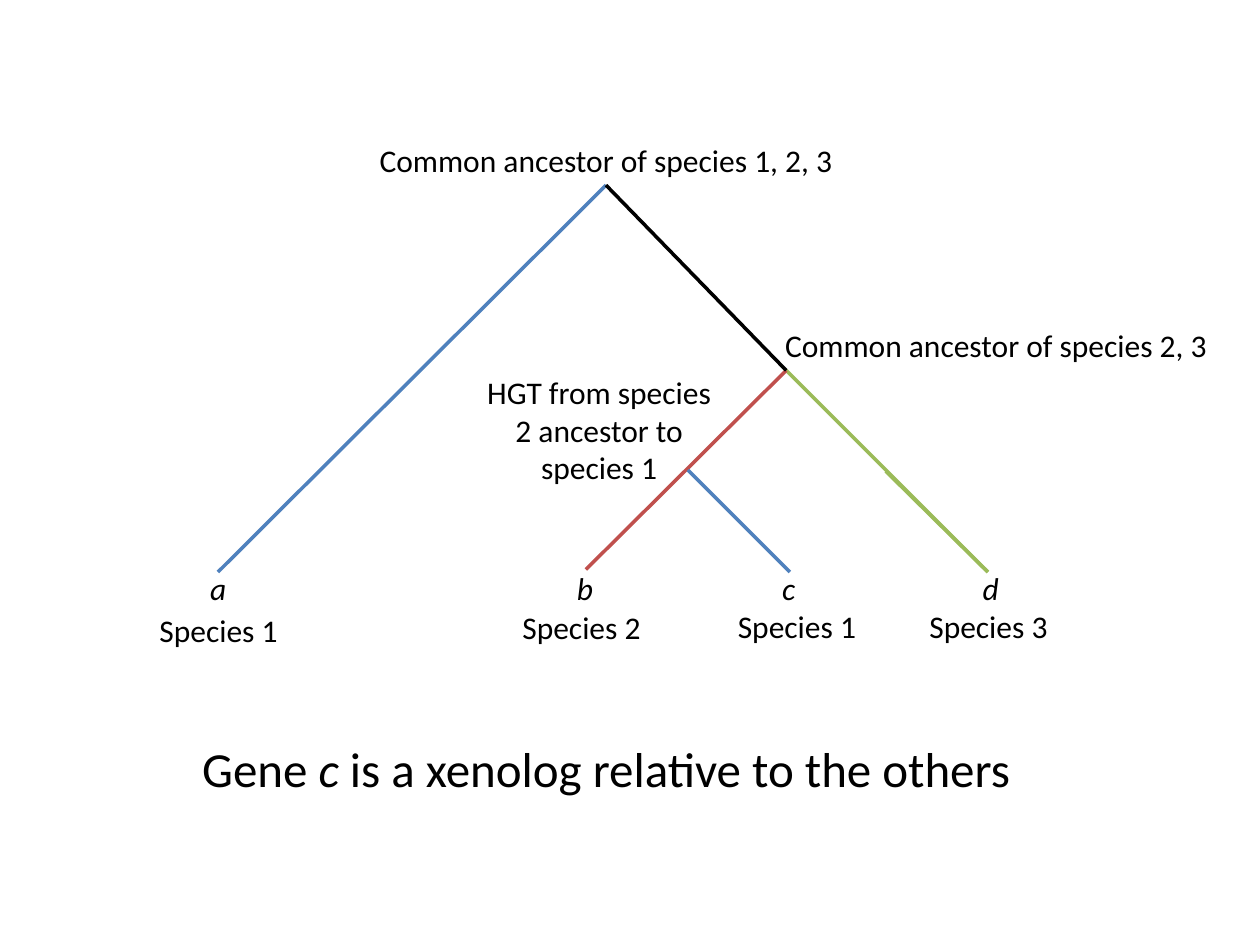
import pptx
import pptx.util
import pptx.dml.color
import pptx.enum.shapes
import pptx.enum.text
from lxml import etree

COLS, ROWS = 100, 75
HUES = {"blue": "4F81BD", "red": "C0504D", "green": "9BBB59", "black": "000000"}
ALIGN = pptx.enum.text.PP_ALIGN


def rgb(name):
    return pptx.dml.color.RGBColor.from_string(HUES[name])


def write(para, text, size=18, font="Calibri", hue="black", italic=False):
    """Add one formatted run to a paragraph."""
    run = para.add_run()
    run.text = text
    run.font.size = pptx.util.Pt(size)
    run.font.name = font
    run.font.italic = italic
    run.font.color.rgb = rgb(hue)


class Tree:
    """Style and slide of a gene tree, placed in columns and rows."""

    def __init__(self, deck, weight=2):
        self.slide = deck.slides.add_slide(deck.slide_layouts[6])
        self.col = deck.slide_width / COLS
        self.row = deck.slide_height / ROWS
        self.weight = pptx.util.Pt(weight)

    def spot(self, x, y):
        return round(x * self.col), round(y * self.row)

    def branch(self, start, end, hue):
        line = self.slide.shapes.add_connector(
            pptx.enum.shapes.MSO_CONNECTOR.STRAIGHT,
            *self.spot(*start), *self.spot(*end))
        line.line.color.rgb = rgb(hue)
        line.line.width = self.weight
        props = line.line._get_or_add_ln().getparent()
        etree.SubElement(props, pptx.oxml.ns.qn("a:effectLst"))

    def label(self, x, y, wide, high, *parts, wrap=False, align=ALIGN.CENTER, **style):
        """Add a text box; a part is a text or a (text, italic) pair."""
        box = self.slide.shapes.add_textbox(*self.spot(x, y), *self.spot(wide, high))
        frame = box.text_frame
        frame.word_wrap = wrap
        frame.auto_size = pptx.enum.text.MSO_AUTO_SIZE.SHAPE_TO_FIT_TEXT
        para = frame.paragraphs[0]
        para.alignment = align
        for part in parts:
            text, italic = (part, False) if isinstance(part, str) else part
            write(para, text, italic=italic, **style)


def main():
    deck = pptx.Presentation()
    deck.slide_width = pptx.util.Inches(10)
    deck.slide_height = pptx.util.Inches(7.5)
    tree = Tree(deck)

    root, fork, jump = (48.1, 14.7), (62.4, 29.4), (54.6, 37.3)
    tips = {"a": (17.3, 45.4), "b": (46.5, 45.2),
            "c": (62.7, 45.4), "d": (78.4, 45.4)}
    for start, end, hue in [
        (root, tips["a"], "blue"),
        (fork, tips["d"], "green"),
        (fork, tips["b"], "red"),
        (fork, root, "black"),
        ((70.3, 37.4), tips["d"], "green"),
        (jump, tips["c"], "blue"),
    ]:
        tree.branch(start, end, hue)

    tree.label(28.9, 10.7, 38.4, 4, "Common ancestor of species 1, 2, 3")
    tree.label(61.1, 25.4, 35.9, 4, "Common ancestor of species 2, 3")
    tree.label(37, 29.1, 21.1, 10.1, "HGT from species 2 ancestor to species 1",
               wrap=True)

    for gene, left, kind, under, top in [
        ("a", 15.7, 1, 11.6, 48),
        ("b", 44.8, 2, 40.4, 47.8),
        ("c", 61.1, 1, 57.5, 47.7),
        ("d", 77, 3, 72.7, 47.7),
    ]:
        tree.label(left, 44.7, 3.1 if gene == "c" else 3.3, 4, (gene, True),
                   align=ALIGN.LEFT)
        tree.label(under, top, 11.5, 4, f"Species {kind}")

    tree.label(14.7, 58.1, 66.8, 5.7, "Gene ", ("c ", True),
               "is a xenolog relative to the others", size=28)
    deck.save("out.pptx")


if __name__ == "__main__":
    main()
